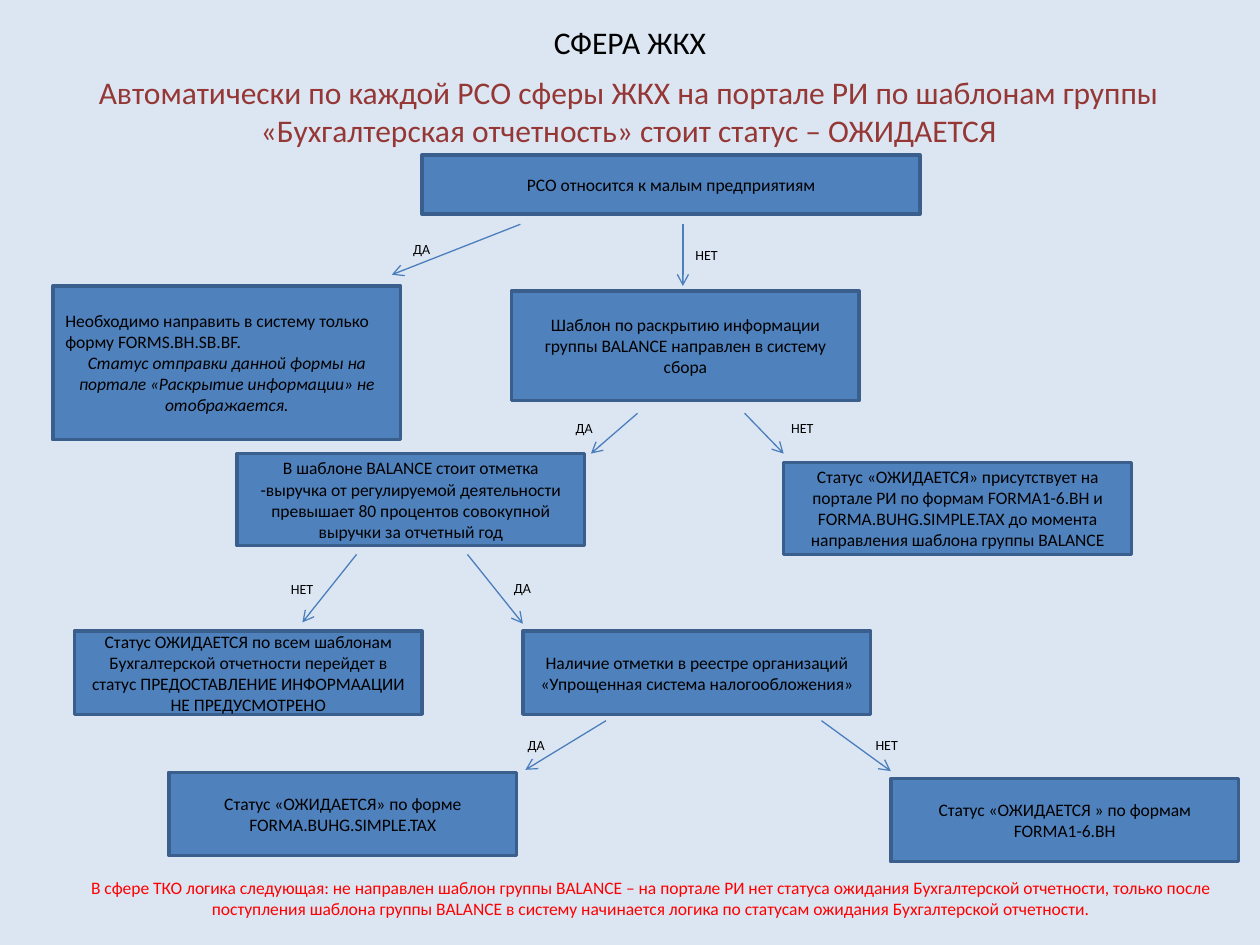
from lxml import etree
from pptx import Presentation
from pptx.dml.color import RGBColor
from pptx.enum import shapes, text
from pptx.oxml.ns import qn
from pptx.util import Inches, Pt

BACKGROUND = RGBColor(0xDC, 0xE6, 0xF2)
BOX_FILL = RGBColor(0x4F, 0x81, 0xBD)
BOX_LINE = RGBColor(0x3A, 0x5F, 0x8C)
ARROW = RGBColor(0x4B, 0x7E, 0xBC)
BLACK = RGBColor(0, 0, 0)
DARK_RED = RGBColor(0x95, 0x37, 0x35)
RED = RGBColor(0xFF, 0, 0)
FONT = "Calibri"
YES, NO = "ДА", "НЕТ"
LABEL_WIDTH = {YES: 0.34, NO: 0.38}
STEP_WIDTH = 2.76

# Question box, question, branches. Each branch holds its answer and the offsets
# of label, arrow start and arrow tip from the lower left corner of the box.
DECISIONS = [
    ((3.35, 1.23, 3.95, 0.47), "РСО относится к малым предприятиям",
     [(YES, (-0.17, 0.16), (0.78, 0.08), (-0.24, 0.48)),
      (NO, (2.07, 0.21), (2.07, 0.08), (2.07, 0.57))]),
    ((4.06, 2.31, STEP_WIDTH, 0.87),
     "Шаблон по раскрытию информации группы BALANCE направлен в систему сбора",
     [(YES, (0.41, 0.10), (1.00, 0.10), (0.63, 0.42)),
      (NO, (2.12, 0.10), (1.85, 0.10), (2.16, 0.42))]),
    ((1.88, 3.60, STEP_WIDTH, 0.73),
     "В шаблоне BALANCE стоит отметка -выручка от регулируемой деятельности "
     "превышает 80 процентов совокупной выручки за отчетный год",
     [(NO, (0.33, 0.23), (0.95, 0.07), (0.52, 0.61)),
      (YES, (2.10, 0.22), (1.83, 0.07), (2.27, 0.62))]),
    ((4.15, 5.01, STEP_WIDTH, 0.66),
     "Наличие отметки в реестре организаций «Упрощенная система налогообложения»",
     [(YES, (-0.06, 0.13), (0.66, 0.05), (0.02, 0.44)),
      (NO, (2.70, 0.13), (2.37, 0.05), (2.92, 0.45))]),
]

OUTCOMES = [
    ((6.22, 3.67, STEP_WIDTH, 0.73),
     "Статус «ОЖИДАЕТСЯ» присутствует на портале РИ по формам FORMA1-6.BH и "
     "FORMA.BUHG.SIMPLE.TAX до момента направления шаблона группы BALANCE"),
    ((0.59, 5.01, STEP_WIDTH, 0.66),
     "Статус ОЖИДАЕТСЯ по всем шаблонам Бухгалтерской отчетности перейдет в "
     "статус ПРЕДОСТАВЛЕНИЕ ИНФОРМААЦИИ НЕ ПРЕДУСМОТРЕНО"),
    ((1.34, 6.13, STEP_WIDTH, 0.66), "Статус «ОЖИДАЕТСЯ» по форме FORMA.BUHG.SIMPLE.TAX"),
    ((7.07, 6.18, STEP_WIDTH, 0.66), "Статус «ОЖИДАЕТСЯ » по формам FORMA1-6.BH"),
]

SMALL_BUSINESS_BOX = (0.42, 2.27, STEP_WIDTH, 1.22)
SMALL_BUSINESS = ("Необходимо направить в систему только форму FORMS.BH.SB.BF.\n"
                  "Статус отправки данной формы на портале «Раскрытие информации» "
                  "не отображается.")


def inches(values):
    return [Inches(value) for value in values]


def write(frame, words, size, color, align=text.PP_ALIGN.CENTER):
    frame.text = words
    for paragraph in frame.paragraphs:
        paragraph.alignment = align
        paragraph.font.name = FONT
        paragraph.font.size = Pt(size)
        paragraph.font.color.rgb = color


def add_text(slide, box, words, size, color, align=text.PP_ALIGN.CENTER, wrap=True):
    frame = slide.shapes.add_textbox(*inches(box)).text_frame
    frame.word_wrap = wrap
    write(frame, words, size, color, align)


def add_title(slide, box, words):
    title = slide.shapes.title
    title.left, title.top, title.width, title.height = inches(box)
    frame = title.text_frame
    frame.auto_size = text.MSO_AUTO_SIZE.NONE
    frame.vertical_anchor = text.MSO_ANCHOR.TOP
    write(frame, words, 18, BLACK)


def add_step(slide, box, words):
    step = slide.shapes.add_shape(shapes.MSO_SHAPE.RECTANGLE, *inches(box))
    step.shadow.inherit = False
    step.fill.solid()
    step.fill.fore_color.rgb = BOX_FILL
    step.line.color.rgb = BOX_LINE
    step.line.width = Pt(2)
    step.text_frame.vertical_anchor = text.MSO_ANCHOR.MIDDLE
    write(step.text_frame, words, 10, BLACK)
    return step


def add_arrow(slide, start, tip):
    arrow = slide.shapes.add_connector(shapes.MSO_CONNECTOR.STRAIGHT,
                                       *inches(start), *inches(tip))
    arrow.line.color.rgb = ARROW
    arrow.line.width = Pt(0.75)
    properties = arrow.element.spPr
    etree.SubElement(properties.find(qn("a:ln")), qn("a:tailEnd"), type="arrow")
    etree.SubElement(properties, qn("a:effectLst"))


def add_decision(slide, box, question, branches):
    """Place a question box with its labelled arrows below it."""
    add_step(slide, box, question)
    left, top, _, height = box

    def below(offset):
        return left + offset[0], top + height + offset[1]

    for answer, label, start, tip in branches:
        add_arrow(slide, below(start), below(tip))
        add_text(slide, (*below(label), LABEL_WIDTH[answer], 0.24), answer, 8,
                 BLACK, text.PP_ALIGN.LEFT, wrap=False)


def add_small_business_outcome(slide, box):
    step = add_step(slide, box, SMALL_BUSINESS)
    action, remark = step.text_frame.paragraphs
    action.alignment = text.PP_ALIGN.LEFT
    remark.font.italic = True


def main():
    deck = Presentation()
    deck.slide_width, deck.slide_height = inches((10, 7.5))
    slide = deck.slides.add_slide(deck.slide_layouts[5])
    slide.background.fill.solid()
    slide.background.fill.fore_color.rgb = BACKGROUND

    add_title(slide, (0.12, 0.13, 9.76, 0.4), "СФЕРА ЖКХ")
    add_text(slide, (0.1, 0.53, 9.78, 0.71),
             "Автоматически по каждой РСО сферы ЖКХ на портале РИ по шаблонам группы "
             "«Бухгалтерская отчетность» стоит статус – ОЖИДАЕТСЯ", 18, DARK_RED)
    for box, question, branches in DECISIONS:
        add_decision(slide, box, question, branches)
    for box, status in OUTCOMES:
        add_step(slide, box, status)
    add_small_business_outcome(slide, SMALL_BUSINESS_BOX)
    add_text(slide, (0.42, 6.91, 9.48, 0.61),
             "В сфере ТКО логика следующая: не направлен шаблон группы BALANCE – на "
             "портале РИ нет статуса ожидания Бухгалтерской отчетности, только после "
             "поступления шаблона группы BALANCE в систему начинается логика по "
             "статусам ожидания Бухгалтерской отчетности.", 10, RED)
    deck.save("out.pptx")


if __name__ == "__main__":
    main()
